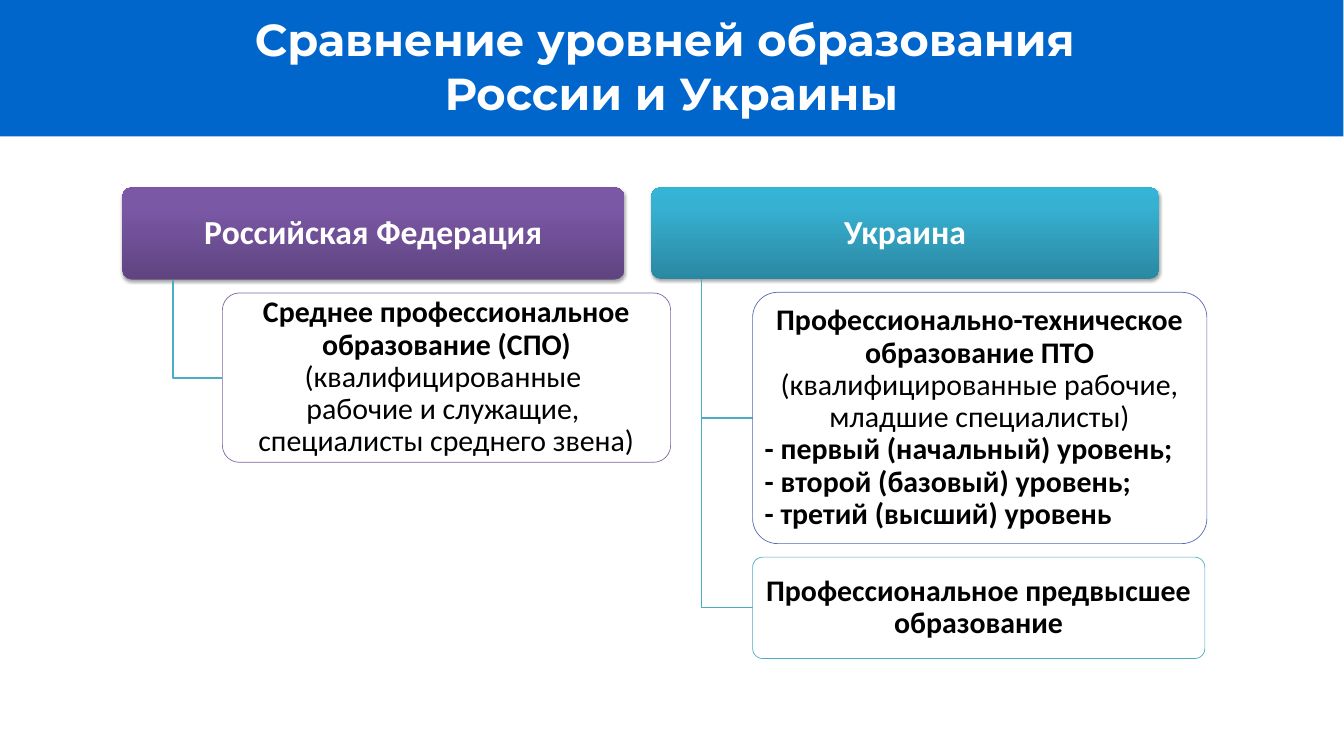
"""Build a slide comparing the education levels of Russia and Ukraine."""
from dataclasses import dataclass

from lxml.etree import SubElement
from pptx import Presentation
from pptx.dml.color import RGBColor
from pptx.enum.shapes import MSO_SHAPE
from pptx.enum.text import MSO_ANCHOR, PP_ALIGN
from pptx.oxml import parse_xml
from pptx.oxml.ns import nsdecls, qn
from pptx.shapes.autoshape import Shape
from pptx.slide import Slide
from pptx.util import Pt

PX = 9144
BRANCH_INDENT = 75
BRANCH_COLOR = "4BACC6"


@dataclass(frozen=True)
class Line:
    text: str
    bold: bool = True
    align: PP_ALIGN = PP_ALIGN.CENTER


@dataclass(frozen=True)
class Box:
    left: int
    top: int
    width: int
    height: int


@dataclass(frozen=True)
class Card:
    box: Box
    outline: str
    lines: list[Line]


@dataclass(frozen=True)
class Column:
    box: Box
    title: str
    gradient: list[tuple[int, str]]
    cards: list[Card]


COLUMNS = [
    Column(
        Box(182, 279, 747, 137),
        "Российская Федерация",
        [(0, "5F4480"), (80, "7B58A6"), (100, "7C57A8")],
        [
            Card(Box(331, 436, 667, 252), "8064A2", [
                Line("Среднее профессиональное образование (СПО)"),
                Line("(квалифицированные ", False),
                Line("рабочие и служащие, ", False),
                Line("специалисты среднего звена)", False),
            ]),
        ],
    ),
    Column(
        Box(969, 279, 756, 136),
        "Украина",
        [(0, "2A88A2"), (80, "37B1D2"), (100, "34B4D6")],
        [
            Card(Box(1120, 435, 676, 374), "5767B4", [
                Line("Профессионально-техническое образование ПТО"),
                Line("(квалифицированные рабочие, младшие специалисты)", False),
                Line("- первый (начальный) уровень;", align=PP_ALIGN.LEFT),
                Line("- второй (базовый) уровень;", align=PP_ALIGN.LEFT),
                Line("- третий (высший) уровень", align=PP_ALIGN.LEFT),
            ]),
            Card(Box(1120, 829, 673, 151), "4BACC6", [
                Line("Профессиональное предвысшее образование"),
            ]),
        ],
    ),
]


def color(value: str) -> RGBColor:
    """Turn a hex string into a colour."""
    return RGBColor.from_string(value)


def add_box(slide: Slide, kind: MSO_SHAPE, box: Box, fill: str) -> Shape:
    """Add a plain filled shape without outline or shadow."""
    shape = slide.shapes.add_shape(
        kind, box.left * PX, box.top * PX, box.width * PX, box.height * PX
    )
    shape.shadow.inherit = False
    shape.fill.solid()
    shape.fill.fore_color.rgb = color(fill)
    shape.line.fill.background()
    if kind == MSO_SHAPE.ROUNDED_RECTANGLE:
        shape.adjustments[0] = 0.1
    return shape


def write_lines(shape: Shape, lines: list[Line], font: str, size: int, ink: str,
                spacing: float, margins: tuple[int, int, int, int],
                anchor: MSO_ANCHOR = MSO_ANCHOR.MIDDLE) -> None:
    """Write paragraphs into a shape, with left, top, right and bottom margins."""
    frame = shape.text_frame
    frame.word_wrap = True
    frame.vertical_anchor = anchor
    (frame.margin_left, frame.margin_top,
     frame.margin_right, frame.margin_bottom) = (margin * PX for margin in margins)
    for index, line in enumerate(lines):
        paragraph = frame.add_paragraph() if index else frame.paragraphs[0]
        paragraph.text = line.text
        paragraph.alignment = line.align
        paragraph.line_spacing = spacing
        paragraph.font.name = font
        paragraph.font.size = Pt(size)
        paragraph.font.bold = line.bold
        paragraph.font.color.rgb = color(ink)


def add_header(slide: Slide, column: Column) -> None:
    """Add a column header with a vertical gradient and a soft shadow."""
    shape = add_box(slide, MSO_SHAPE.ROUNDED_RECTANGLE, column.box, column.gradient[0][1])
    stops = "".join(
        f'<a:gs pos="{position * 1000}"><a:srgbClr val="{value}"/></a:gs>'
        for position, value in column.gradient
    )
    properties = shape.element.spPr
    properties.replace(properties.find(qn("a:solidFill")), parse_xml(
        f'<a:gradFill {nsdecls("a")} rotWithShape="1"><a:gsLst>{stops}</a:gsLst>'
        '<a:lin ang="16200000" scaled="0"/></a:gradFill>'
    ))
    properties.find(qn("a:effectLst")).append(parse_xml(
        f'<a:outerShdw {nsdecls("a")} blurRad="40000" dist="23000" dir="5400000" '
        'rotWithShape="0"><a:srgbClr val="000000"><a:alpha val="35000"/></a:srgbClr>'
        '</a:outerShdw>'
    ))
    write_lines(shape, [Line(column.title)], "Calibri", 36, "FFFFFF", 0.9, (7, 5, 7, 5))


def add_branch(slide: Slide, header: Box, card: Box) -> None:
    """Draw the elbow from a header's lower edge to a card's left side."""
    start_x = header.left + BRANCH_INDENT
    middle = card.top + card.height // 2
    builder = slide.shapes.build_freeform(start_x, header.top + header.height, scale=PX)
    builder.add_line_segments([(start_x, middle), (card.left, middle)], close=False)
    shape = builder.convert_to_shape()
    shape.shadow.inherit = False
    shape.fill.background()
    shape.line.color.rgb = color(BRANCH_COLOR)
    shape.line.width = Pt(2)


def add_card(slide: Slide, card: Card) -> None:
    """Add an outlined, slightly transparent card with its text."""
    shape = add_box(slide, MSO_SHAPE.ROUNDED_RECTANGLE, card.box, "FFFFFF")
    fill_color = shape.element.spPr.find(qn("a:solidFill"))[0]
    SubElement(fill_color, qn("a:alpha"), val="90000")
    shape.line.color.rgb = color(card.outline)
    shape.line.width = Pt(0.75)
    write_lines(shape, card.lines, "Calibri", 32, "000000", 0.9, (7, 4, 7, 4))


def main() -> None:
    """Build and save the presentation."""
    presentation = Presentation()
    presentation.slide_width = 2000 * PX
    presentation.slide_height = 1125 * PX
    slide = presentation.slides.add_slide(presentation.slide_layouts[6])
    banner = add_box(slide, MSO_SHAPE.RECTANGLE, Box(-1, 0, 2000, 203), "0066CC")
    title = [Line("Сравнение уровней образования "), Line("России и Украины")]
    write_lines(banner, title, "Montserrat", 48, "FFFFFF", 1.0, (0, 18, 0, 0), MSO_ANCHOR.TOP)
    for column in COLUMNS:
        add_header(slide, column)
        for card in column.cards:
            add_branch(slide, column.box, card.box)
            add_card(slide, card)
    presentation.save("out.pptx")


if __name__ == "__main__":
    main()
